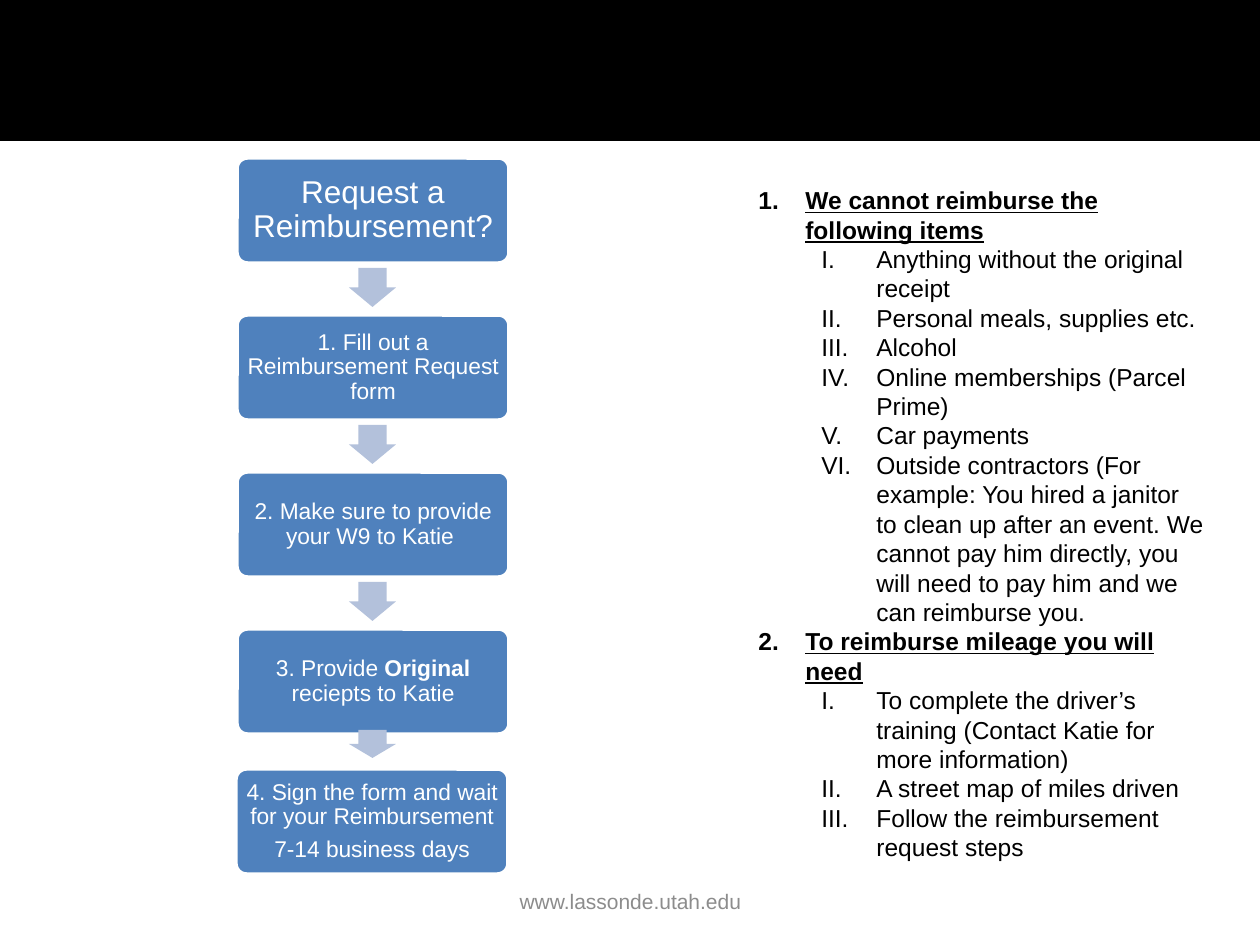
import pptx
import pptx.util
import pptx.dml.color
import pptx.enum.shapes
import pptx.enum.text
import pptx.oxml.ns
import lxml.etree

BLACK = pptx.dml.color.RGBColor(0x00, 0x00, 0x00)
WHITE = pptx.dml.color.RGBColor(0xFF, 0xFF, 0xFF)
GREY = pptx.dml.color.RGBColor(0x8C, 0x8C, 0x8C)
STEP_BLUE = pptx.dml.color.RGBColor(0x4F, 0x81, 0xBD)
ARROW_BLUE = pptx.dml.color.RGBColor(0xB3, 0xC1, 0xDB)
SHAPES = pptx.enum.shapes.MSO_SHAPE
CENTER = pptx.enum.text.PP_ALIGN.CENTER
MIDDLE = pptx.enum.text.MSO_ANCHOR.MIDDLE
SCALE = 914400 / 126


def px(*lengths):
    return [pptx.util.Emu(round(length * SCALE)) for length in lengths]


def add_filled(kind, area, color):
    shape = page.shapes.add_shape(kind, *px(*area))
    shape.shadow.inherit = False
    shape.fill.solid()
    shape.fill.fore_color.rgb = color
    shape.line.fill.background()
    return shape


deck = pptx.Presentation()
deck.slide_width, deck.slide_height = px(1260, 945)
page = deck.slides.add_slide(deck.slide_layouts[6])

# Header band
add_filled(SHAPES.RECTANGLE, (0, 0, 1260, 141), BLACK)

# Footer address
footer = page.shapes.add_textbox(*px(431, 876, 399, 50))
footer.text_frame.word_wrap = True
footer.text_frame.vertical_anchor = MIDDLE
footer.text_frame.text = "www.lassonde.utah.edu"
para = footer.text_frame.paragraphs[0]
para.alignment = CENTER
para.font.name = "Arial"
para.font.size = pptx.util.Pt(12)
para.font.color.rgb = GREY

# Flow of steps: each step is a list of paragraphs, each a list of spans
steps = [
    [["Request a Reimbursement?"]],
    [["1. Fill out a Reimbursement Request form"]],
    [["2. Make sure to provide your W9 to Katie "]],
    [["3. Provide ", "Original ", "reciepts to Katie"]],
    [["4. Sign the form and wait for your Reimbursement"], ["7-14 business days"]],
]
PITCH = 157
last = len(steps) - 1
for index, paragraphs in enumerate(steps):
    # The last step sits closer to the one above
    left, top = (236, 769) if index == last else (237, 158 + PITCH * index)
    box = add_filled(SHAPES.ROUNDED_RECTANGLE, (left, top, 272, 105), STEP_BLUE)
    box.adjustments[0] = 0.1
    box.line.color.rgb = WHITE
    box.line.width = pptx.util.Pt(2)

    frame = box.text_frame
    frame.word_wrap = True
    frame.vertical_anchor = MIDDLE
    inset = px(9 if index == 0 else 6)[0]
    frame.margin_left = frame.margin_right = inset
    frame.margin_top = frame.margin_bottom = inset
    frame.text = "\n".join("".join(spans) for spans in paragraphs)
    for para, spans in zip(frame.paragraphs, paragraphs):
        para.alignment = CENTER
        para.line_spacing = 0.9
        para.font.name = "Arial"
        para.font.size = pptx.util.Pt(18 if index == 0 else 13)
        para.font.color.rgb = WHITE
        if len(spans) > 1:
            para.clear()
            for text in spans:
                span = para.add_run()
                span.text = text
                span.font.bold = text == "Original "
    if len(paragraphs) > 1:
        frame.paragraphs[0].space_after = pptx.util.Pt(4.5)

    # Arrow to the next step
    if index < last:
        if index == last - 1:
            area = (349, 730, 47, 28)
        else:
            area = (349, 268 + PITCH * index, 47, 39)
        arrow = add_filled(SHAPES.DOWN_ARROW, area, ARROW_BLUE)
        arrow.adjustments[0] = 0.6
        arrow.adjustments[1] = 0.5

# Numbered rules: level and text
rules = [
    (0, "We cannot reimburse the following items"),
    (1, "Anything without the original receipt"),
    (1, "Personal meals, supplies etc."),
    (1, "Alcohol"),
    (1, "Online memberships (Parcel Prime)"),
    (1, "Car payments"),
    (1, "Outside contractors (For example: You hired a janitor to clean up after "
        "an event. We cannot pay him directly, you will need to pay him and we "
        "can reimburse you."),
    (0, "To reimburse mileage you will need"),
    (1, "To complete the driver’s training (Contact Katie for more information)"),
    (1, "A street map of miles driven"),
    (1, "Follow the reimbursement request steps"),
]
# Left margin, hanging indent and numbering by level
levels = [(47, -47, "arabicPeriod"), (118, -55, "romanUcPeriod")]
rules_box = page.shapes.add_textbox(*px(746, 179, 472, 733))
frame = rules_box.text_frame
frame.word_wrap = True
frame.text = "\n".join(text for level, text in rules)
for para, (level, text) in zip(frame.paragraphs, rules):
    margin, indent, numbering = levels[level]
    para.level = level
    properties = para._p.get_or_add_pPr()
    properties.set("marL", str(px(margin)[0]))
    properties.set("indent", str(px(indent)[0]))
    lxml.etree.SubElement(properties, pptx.oxml.ns.qn("a:buFont"), typeface="+mj-lt")
    lxml.etree.SubElement(properties, pptx.oxml.ns.qn("a:buAutoNum"), type=numbering)
    font = para.runs[0].font
    font.name = "Arial"
    font.size = pptx.util.Pt(14)
    font.color.rgb = BLACK
    font.bold = font.underline = level == 0

deck.save("out.pptx")
